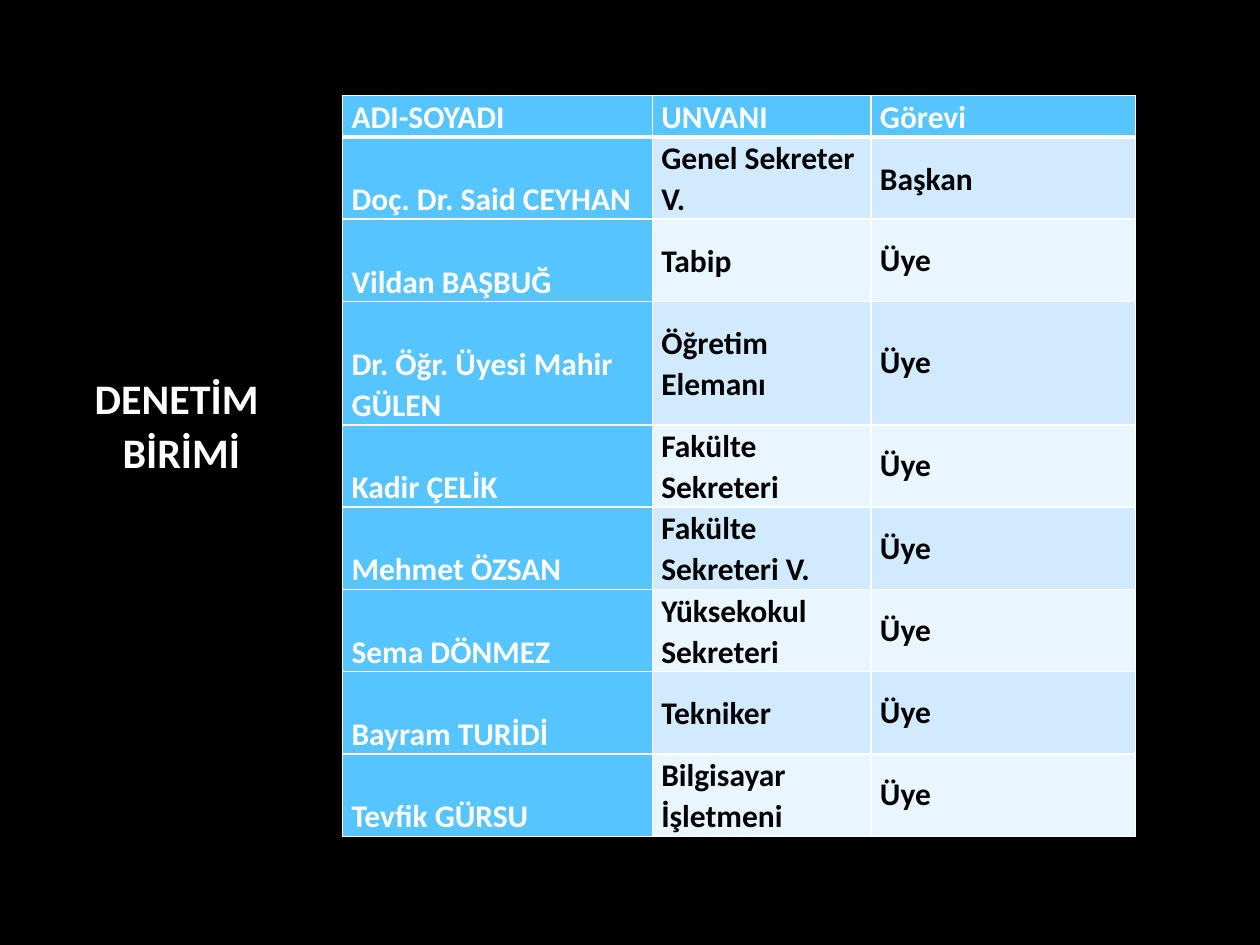
from pptx import Presentation
from pptx.dml.color import RGBColor as RGB
from pptx.enum.text import MSO_ANCHOR as Anchor, PP_ALIGN as Align
from pptx.oxml import parse_xml
from pptx.oxml.ns import nsdecls
from pptx.util import Pt

HUES = {"black": "000000", "white": "FFFFFF", "blue": "56C5FF",
        "dark": "D1EAFF", "light": "E9F5FF"}
ROWS = [
    ("ADI-SOYADI", "UNVANI", "Görevi"),
    ("Doç. Dr. Said CEYHAN", "Genel Sekreter V.", "Başkan"),
    ("Vildan BAŞBUĞ", "Tabip", "Üye"),
    ("Dr. Öğr. Üyesi Mahir GÜLEN", "Öğretim Elemanı", "Üye"),
    ("Kadir ÇELİK", "Fakülte Sekreteri", "Üye"),
    ("Mehmet ÖZSAN", "Fakülte Sekreteri V.", "Üye"),
    ("Sema DÖNMEZ", "Yüksekokul Sekreteri", "Üye"),
    ("Bayram TURİDİ", "Tekniker", "Üye"),
    ("Tevfik GÜRSU", "Bilgisayar İşletmeni", "Üye"),
]
WIDTHS = [177, 125, 151]
LINE = 23.5
LINES = [1, 2, 2, 3, 2, 2, 2, 2, 2]


def style(para, size, hue, space=1.07):
    para.line_spacing = space
    font = para.font
    font.name, font.size, font.bold = "Calibri", Pt(size), True
    font.color.rgb = RGB.from_string(HUES[hue])


def edge(cell, side, width):
    cell._tc.get_or_add_tcPr().append(parse_xml(
        f'<a:ln{side} {nsdecls("a")} w="{Pt(width)}"><a:solidFill>'
        f'<a:srgbClr val="{HUES["white"]}"/></a:solidFill></a:ln{side}>'))


deck = Presentation()
deck.slide_width, deck.slide_height = Pt(720), Pt(540)
slide = deck.slides.add_slide(deck.slide_layouts[6])
back = slide.background.fill
back.solid()
back.fore_color.rgb = RGB.from_string(HUES["black"])

table = slide.shapes.add_table(
    len(ROWS), len(WIDTHS), Pt(195.8), Pt(54.7),
    Pt(sum(WIDTHS)), Pt(LINE * sum(LINES))).table
table.first_row = table.horz_banding = False
for col, width in zip(table.columns, WIDTHS):
    col.width = Pt(width)
for r, (row, texts) in enumerate(zip(table.rows, ROWS)):
    row.height = Pt(LINE * LINES[r])
    for c, (cell, text) in enumerate(zip(row.cells, texts)):
        head = r == 0 or c == 0
        for side in "LRTB":
            thick = (r, side) in ((0, "B"), (1, "T"))
            edge(cell, side, 3 if thick else 1)
        cell.fill.solid()
        hue = "blue" if head else "dark" if r % 2 else "light"
        cell.fill.fore_color.rgb = RGB.from_string(HUES[hue])
        cell.margin_left = cell.margin_right = Pt(5.1)
        cell.margin_top = cell.margin_bottom = 0
        if r == 0:
            cell.vertical_anchor = Anchor.TOP
        else:
            cell.vertical_anchor = Anchor.MIDDLE if c else Anchor.BOTTOM
        cell.text = text
        style(cell.text_frame.paragraphs[0], 18,
              "white" if head else "black", 1.0 if text == "Üye" else 1.07)

title = slide.shapes.add_textbox(Pt(42.5), Pt(207.4), Pt(122.4), Pt(69.8))
frame = title.text_frame
frame.word_wrap = False
frame.text = "DENETİM \nBİRİMİ"
for para in frame.paragraphs:
    para.alignment = Align.CENTER
    style(para, 24, "white")

deck.save("out.pptx")
